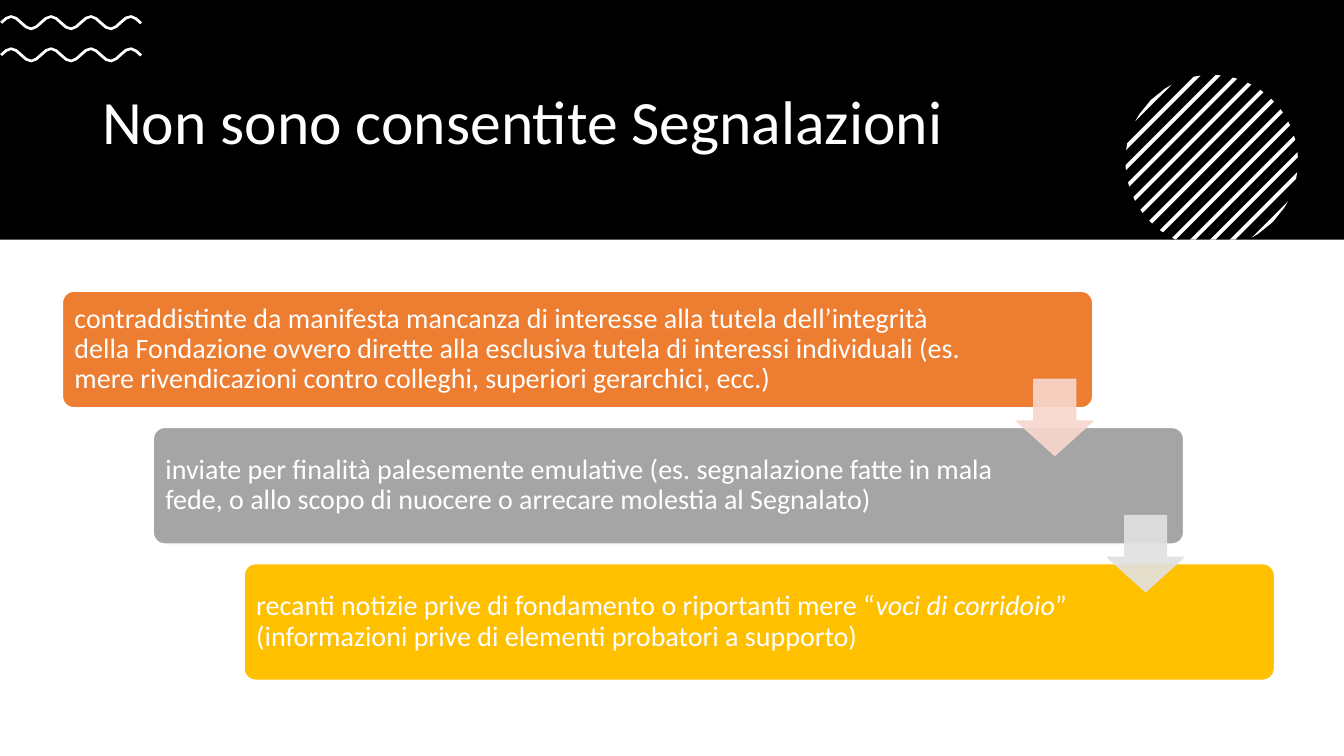
from math import atan, cos, pi, sin, sqrt

from lxml import etree
from pptx import Presentation
from pptx.dml.color import RGBColor
from pptx.enum.shapes import MSO_SHAPE
from pptx.enum.text import MSO_ANCHOR, PP_ALIGN
from pptx.oxml.ns import qn
from pptx.util import Pt

RECT = MSO_SHAPE.RECTANGLE
ROUND = MSO_SHAPE.ROUNDED_RECTANGLE
DOWN = MSO_SHAPE.DOWN_ARROW
MIDDLE = MSO_ANCHOR.MIDDLE
LEFT = PP_ALIGN.LEFT

WHITE = "FFFFFF"
FONT = "Calibri"

# Each step: colour, room kept free at the right, runs as (text, italic)
STEPS = [
    ("ED7D31", 91, [(
        "contraddistinte da manifesta mancanza di interesse alla tutela "
        "dell’integrità della Fondazione ovvero dirette alla esclusiva tutela "
        "di interessi individuali (es. mere rivendicazioni contro colleghi, "
        "superiori gerarchici, ecc.)", False)]),
    ("A5A5A5", 124, [(
        "inviate per finalità palesemente emulative (es. segnalazione fatte in "
        "mala fede, o allo scopo di nuocere o arrecare molestia al Segnalato)",
        False)]),
    ("FFC000", 124, [
        ("recanti notizie prive di fondamento o riportanti mere “", False),
        ("voci di corridoio", True),
        ("” (informazioni prive di elementi probatori a supporto)", False)]),
]
ARROWS = ["F8D7CE", "E1E1E1"]


def paint(fill, color, alpha=100):
    """Set a solid fill, with its opacity in percent."""
    fill.solid()
    fill.fore_color.rgb = RGBColor.from_string(color)
    if alpha < 100:
        tone = fill._xPr.find(qn("a:solidFill"))[0]
        etree.SubElement(tone, qn("a:alpha"), val=str(alpha * 1000))


def add_box(slide, kind, box, color, line=None, alpha=100):
    shape = slide.shapes.add_shape(kind, *map(Pt, box))
    shape.shadow.inherit = False
    paint(shape.fill, color, alpha)
    if line:
        shape.line.width = Pt(1)
        paint(shape.line.fill, line, alpha)
    else:
        shape.line.fill.background()
    return shape


def add_outline(slide, points):
    """Draw a closed white outline through points given in points."""
    (x, y), *rest = points
    pen = slide.shapes.build_freeform(Pt(x), Pt(y))
    pen.add_line_segments([(Pt(x), Pt(y)) for x, y in rest], close=True)
    shape = pen.convert_to_shape()
    shape.shadow.inherit = False
    paint(shape.fill, WHITE)
    shape.line.fill.background()


def write(frame, runs, size):
    frame.word_wrap = True
    frame.vertical_anchor = MIDDLE
    para = frame.paragraphs[0]
    para.alignment = LEFT
    para.line_spacing = 0.9
    for text, slant in runs:
        run = para.add_run()
        run.text = text
        run.font.name = FONT
        run.font.size = Pt(size)
        run.font.italic = slant
        run.font.color.rgb = RGBColor.from_string(WHITE)


def add_wave(slide, box):
    """Draw a ribbon 2 pt thick that follows a cosine through the box."""
    left, top, width, height = box
    amp, rate = height / 2 - 1, 2 * pi / 28.4
    upper, lower = [], []
    count = 28
    for i in range(count + 1):
        x = 0.8 + (width - 1.6) * i / count
        turn = rate * (x - 8)
        y = height / 2 - amp * cos(turn)
        tilt = atan(amp * rate * sin(turn))
        dx, dy = sin(tilt), cos(tilt)
        upper.append((left + x + dx, top + y - dy))
        lower.append((left + x - dx, top + y + dy))
    add_outline(slide, upper + lower[::-1])


def add_disc(slide, box, floor):
    """Draw a disc of diagonal stripes, cut off level at the floor."""
    left, top, size, _ = box
    radius = size / 2
    mid_x, mid_y = left + radius, top + radius
    reach = radius * sqrt(2)
    pitch, half, last = 14.2, 2, 6
    for k in range(-last, last + 1):
        low = max(k * pitch - half, -reach)
        high = min(k * pitch + half, reach)
        count = 2 if abs(k) == last else 1
        upper, lower = [], []
        for i in range(count + 1):
            shift = low + (high - low) * i / count
            chord = sqrt(max(radius ** 2 - shift ** 2 / 2, 0) / 2)
            x, y = mid_x + shift / 2, mid_y + shift / 2
            upper.append((x + chord, y - chord))
            end = min(y + chord, floor)
            lower.append((x + y - end, end))
        add_outline(slide, upper + lower[::-1])


def add_header(slide, box):
    left, top, width, height = box
    add_box(slide, RECT, box, "000000")
    title = slide.shapes.add_textbox(
        Pt(left + 66), Pt(top + 44.9), Pt(828), Pt(88.6))
    write(title.text_frame, [("Non sono consentite Segnalazioni", False)], 44)
    for y in (33.8, 10.8):
        add_wave(slide, (left, top + y, 101.6, 10.8))
    add_disc(slide, (left + 803.9, top + 53.5, 123.2, 123.2), top + height)


def add_steps(slide, box):
    """Place the staircase of steps, then the arrows that link them."""
    left, top, width, height = box
    wide, high = 736, 83.3
    last = len(STEPS) - 1
    step_x, step_y = (width - wide) / last, (height - high) / last
    for k, (color, room, runs) in enumerate(STEPS):
        place = (left + k * step_x, top + k * step_y, wide, high)
        step = add_box(slide, ROUND, place, color, WHITE)
        step.adjustments[0] = 0.1
        frame = step.text_frame
        frame.margin_left, frame.margin_right = Pt(6.2), Pt(room)
        write(frame, runs, 20)
    for k, color in enumerate(ARROWS):
        place = (left + k * step_x + 681.7, top + k * step_y + 63, 54.3, 54.3)
        arrow = add_box(slide, DOWN, place, color, color, 90)
        arrow.adjustments[0] = 0.55
        arrow.adjustments[1] = 0.45


def main():
    deck = Presentation()
    deck.slide_width, deck.slide_height = Pt(960), Pt(540)
    slide = deck.slides.add_slide(deck.slide_layouts[6])
    add_header(slide, (0, 0, 960, 171.2))
    add_steps(slide, (44.6, 208, 865.8, 277.9))
    deck.save("out.pptx")


if __name__ == "__main__":
    main()
